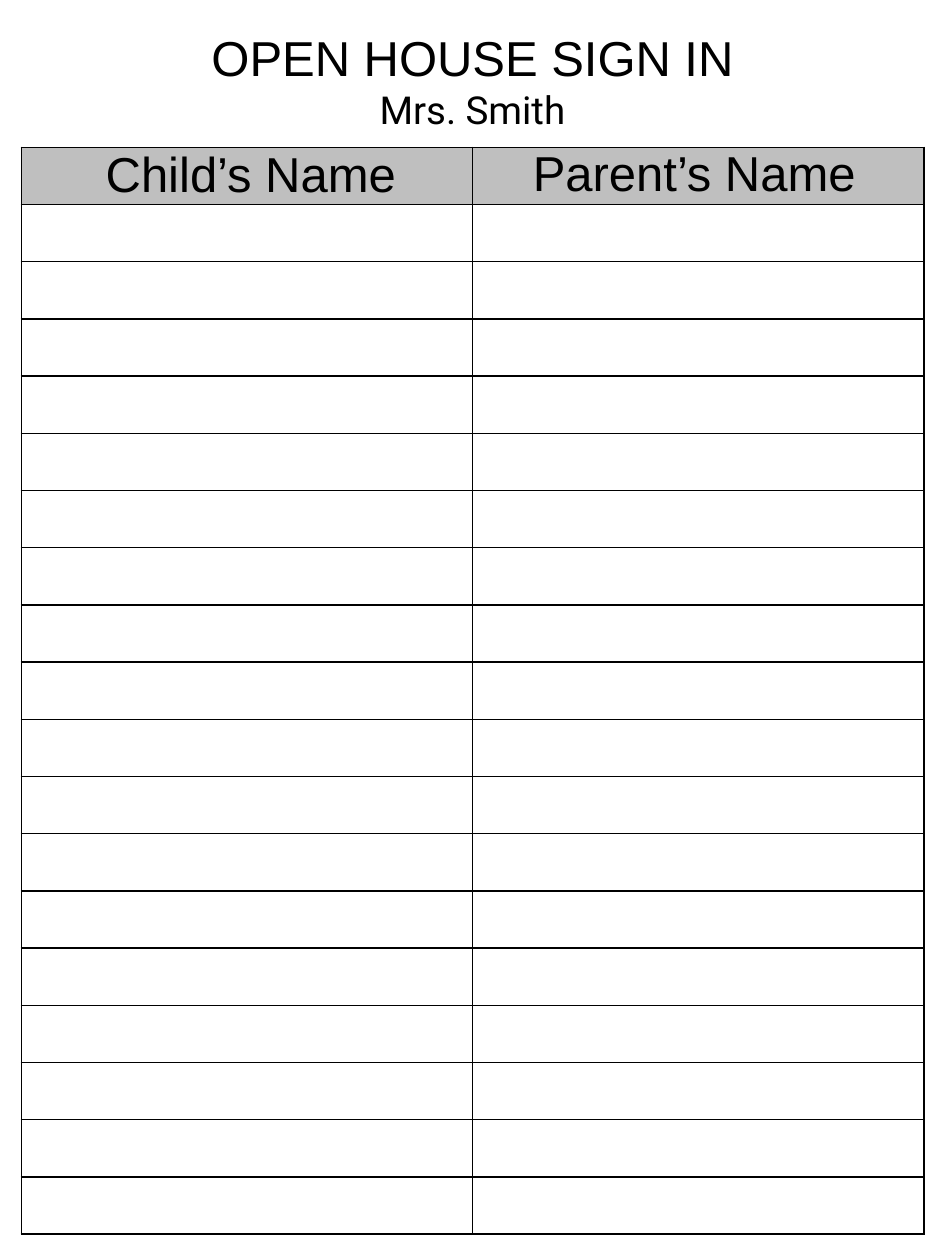
from pptx import Presentation
from pptx.dml.color import RGBColor
from pptx.enum.text import MSO_AUTO_SIZE, PP_ALIGN
from pptx.oxml import parse_xml
from pptx.oxml.ns import nsdecls
from pptx.util import Cm, Pt

BLACK = RGBColor(0, 0, 0)
WHITE = RGBColor(255, 255, 255)
GREY = RGBColor(0xBF, 0xBF, 0xBF)

# Left, top, height in cm, then lines of text, size, font
BOX_WIDTH = 16.05
TEXTS = [
    (1.5, 0.43, 3.58, [("OPEN HOUSE SIGN IN", 28, "Arial"),
                       ("Mrs. Smith", 22, "Roboto")]),
    (-2.97, 2.77, 2.64, [("Child’s Name", 28, "Arial")]),
    (5.97, 2.74, 2.64, [("Parent’s Name", 28, "Arial")]),
]
ROWS, COLS = 19, 2
LEFT, TOP, WIDTH, HEIGHT = 0.43, 2.97, 18.2, 21.92


def add_edges(cell):
    """Draw a thin black border on all four sides of a cell."""
    props = cell._tc.get_or_add_tcPr()
    for spot, side in enumerate(("lnL", "lnR", "lnT", "lnB")):
        props.insert(spot, parse_xml(
            f'<a:{side} {nsdecls("a")} w="{Pt(1)}"><a:solidFill>'
            f'<a:srgbClr val="{BLACK}"/></a:solidFill></a:{side}>'))


def add_grid(slide):
    table = slide.shapes.add_table(
        ROWS, COLS, Cm(LEFT), Cm(TOP), Cm(WIDTH), Cm(HEIGHT)).table
    table.horz_banding = False
    for col in table.columns:
        col.width = Cm(WIDTH / COLS)
    for index, row in enumerate(table.rows):
        row.height = Cm(HEIGHT / ROWS)
        for cell in row.cells:
            cell.fill.solid()
            cell.fill.fore_color.rgb = WHITE if index else GREY
            add_edges(cell)


def add_text(slide, left, top, height, lines):
    box = slide.shapes.add_textbox(Cm(left), Cm(top), Cm(BOX_WIDTH), Cm(height))
    frame = box.text_frame
    frame.word_wrap = True
    frame.auto_size = MSO_AUTO_SIZE.NONE
    for index, (words, size, face) in enumerate(lines):
        para = frame.add_paragraph() if index else frame.paragraphs[0]
        para.alignment = PP_ALIGN.CENTER
        run = para.add_run()
        run.text = words
        run.font.size = Pt(size)
        run.font.name = face
        run.font.color.rgb = BLACK


def main():
    deck = Presentation()
    deck.slide_width, deck.slide_height = Cm(19.05), Cm(25.4)
    slide = deck.slides.add_slide(deck.slide_layouts[6])
    add_grid(slide)
    for text in TEXTS:
        add_text(slide, *text)
    deck.save("out.pptx")


if __name__ == "__main__":
    main()
